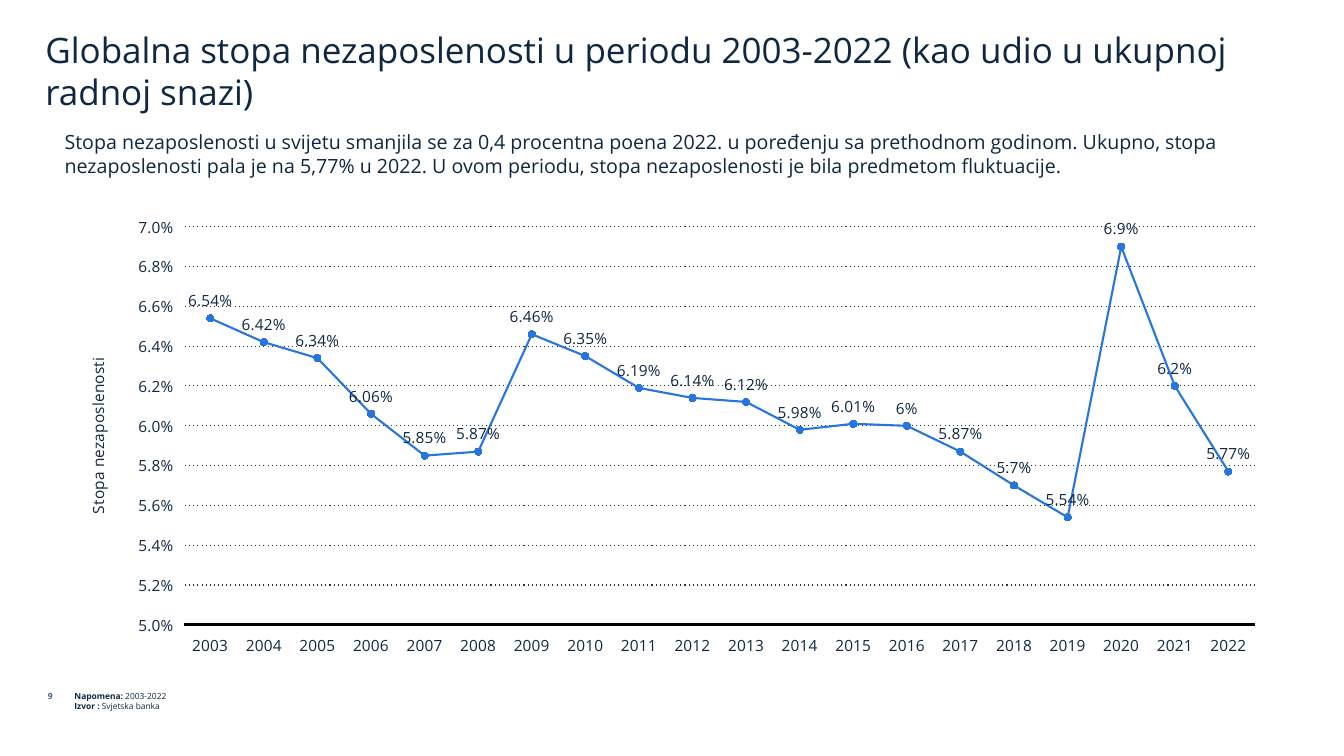
import pptx
import pptx.util
import pptx.chart.data
import pptx.dml.color
import pptx.enum.chart
import pptx.enum.dml
import pptx.enum.text
import pptx.oxml
import pptx.oxml.ns
from lxml import etree

HEADLINE = "Globalna stopa nezaposlenosti u periodu 2003-2022 (kao udio u ukupnoj radnoj snazi)"
SUMMARY = (
    "Stopa nezaposlenosti u svijetu smanjila se za 0,4 procentna poena 2022. u poređenju sa "
    "prethodnom godinom. Ukupno, stopa nezaposlenosti pala je na 5,77% u 2022. U ovom periodu, "
    "stopa nezaposlenosti je bila predmetom fluktuacije."
)
FOOTNOTES = [("Napomena: ", "2003-2022"), ("Izvor : ", "Svjetska banka")]
PAGE_NUMBER = "9"
RATE_TITLE = "Stopa nezaposlenosti"
FIRST_YEAR = 2003
RATES = [0.0654, 0.0642, 0.0634, 0.0606, 0.0585, 0.0587, 0.0646, 0.0635, 0.0619, 0.0614,
         0.0612, 0.0598, 0.0601, 0.06, 0.0587, 0.057, 0.0554, 0.069, 0.062, 0.0577]
LABEL_FORMATS = {2: "0%", 3: "0.0%", 4: "0.00%"}

THEME = {
    "font": "Open Sans", "ink": "0F2741", "muted": "455F7C", "line": "2875DD",
    "grid": "2F2F2F", "axis": "000000", "spacing": 1.0,
    "headline": 25, "summary": 14, "chart": 11, "note": 6,
}
WIDTH, HEIGHT = 13.33, 7.5
FOOT_TOP = 6.81
CHART_WIDTH, CHART_HEIGHT = 12.05, 4.54
PLACES = {
    "headline": (0.35, 0.12, 12.44, 1.05),
    "summary": (0.54, 1.24, 12.24, 0.48),
    "chart": (0.64, 2.06, CHART_WIDTH, CHART_HEIGHT),
    "footnotes": (0.64, FOOT_TOP, 10.47, 0.58),
    "number": (-0.1, FOOT_TOP, 0.72, 0.3),
}
PLOT_PLACE = {"x": 1.18, "y": 0.19, "w": 10.63, "h": 3.95}
RATE_TITLE_PLACE = {"x": 0.18, "y": 1.46}


def inches(place):
    return [pptx.util.Inches(length) for length in place]


def rgb(role):
    return pptx.dml.color.RGBColor.from_string(THEME[role])


def style(font, size, color="ink", bold=False):
    font.name = THEME["font"]
    font.size = pptx.util.Pt(THEME[size])
    font.bold = bold
    font.color.rgb = rgb(color)


def stroke(line, color, width):
    line.color.rgb = rgb(color)
    line.width = pptx.util.Pt(width)


def write(box, part, paragraphs, size, color="ink", align="LEFT", anchor="TOP"):
    box.left, box.top, box.width, box.height = inches(PLACES[part])
    frame = box.text_frame
    frame.word_wrap = True
    frame.auto_size = pptx.enum.text.MSO_AUTO_SIZE.NONE
    frame.vertical_anchor = getattr(pptx.enum.text.MSO_ANCHOR, anchor)
    for index, runs in enumerate(paragraphs):
        paragraph = frame.add_paragraph() if index else frame.paragraphs[0]
        paragraph.alignment = getattr(pptx.enum.text.PP_ALIGN, align)
        paragraph.line_spacing = THEME["spacing"]
        paragraph.space_before = pptx.util.Pt(0)
        for text, bold in runs:
            run = paragraph.add_run()
            run.text = text
            style(run.font, size, color, bold)
    return frame


def chart_layout(place, inner=False):
    tag = pptx.oxml.ns.qn
    layout = etree.Element(tag("c:layout"))
    manual = etree.SubElement(layout, tag("c:manualLayout"))
    settings = [("layoutTarget", "inner")] if inner else []
    settings += [("xMode", "edge"), ("yMode", "edge")]
    for name, length in place.items():
        settings.append((name, length / (CHART_WIDTH if name in "xw" else CHART_HEIGHT)))
    for name, value in settings:
        etree.SubElement(manual, tag("c:" + name)).set("val", str(value))
    return layout


def drop_layout(parent):
    for layout in parent.findall(pptx.oxml.ns.qn("c:layout")):
        parent.remove(layout)


deck = pptx.Presentation()
deck.slide_width, deck.slide_height = inches((WIDTH, HEIGHT))
slide = deck.slides.add_slide(deck.slide_layouts[1])

write(slide.shapes.title, "headline", [[(HEADLINE, False)]], "headline", anchor="BOTTOM")
summary = write(slide.placeholders[1], "summary", [[(SUMMARY, False)]], "summary")
bullet_free = summary.paragraphs[0]._p.get_or_add_pPr()
bullet_free.set("marL", "0")
bullet_free.set("indent", "0")
etree.SubElement(bullet_free, pptx.oxml.ns.qn("a:buNone"))

unemployment = pptx.chart.data.CategoryChartData(number_format="0.00%")
unemployment.categories = [str(FIRST_YEAR + step) for step in range(len(RATES))]
unemployment.add_series("Series 1", RATES)
chart = slide.shapes.add_chart(
    pptx.enum.chart.XL_CHART_TYPE.LINE_MARKERS, *inches(PLACES["chart"]), unemployment
).chart
chart.has_legend = False
chart.has_title = False
style(chart.font, "chart")

years, rates = chart.category_axis, chart.value_axis
for axis in (years, rates):
    axis.major_tick_mark = axis.minor_tick_mark = pptx.enum.chart.XL_TICK_MARK.NONE
    axis.tick_label_position = pptx.enum.chart.XL_TICK_LABEL_POSITION.LOW
    style(axis.tick_labels.font, "chart")
stroke(years.format.line, "axis", 2)
rates.format.line.fill.background()
rates.minimum_scale, rates.maximum_scale, rates.major_unit = 0.05, 0.07, 0.002
rates.tick_labels.number_format = "#,##0.0%"
rates.tick_labels.number_format_is_linked = False
rates.has_major_gridlines = True
gridline = rates.major_gridlines.format.line
stroke(gridline, "grid", 0.75)
gridline.dash_style = pptx.enum.dml.MSO_LINE.ROUND_DOT
for dash in rates._element.iter(pptx.oxml.ns.qn("a:prstDash")):
    dash.set("val", "dot")

rates.has_title = True
rate_run = rates.axis_title.text_frame.paragraphs[0].add_run()
rate_run.text = RATE_TITLE
style(rate_run.font, "chart")
rate_title = rates.axis_title._element
drop_layout(rate_title)
rate_title.find(pptx.oxml.ns.qn("c:tx")).addnext(chart_layout(RATE_TITLE_PLACE))
plot_area = chart._chartSpace.chart.plotArea
drop_layout(plot_area)
plot_area.insert(0, chart_layout(PLOT_PLACE, inner=True))

plot = chart.plots[0]
plot.vary_by_categories = False
trend = plot.series[0]
trend.smooth = False
stroke(trend.format.line, "line", 1.5)
trend.marker.style = pptx.enum.chart.XL_MARKER_STYLE.CIRCLE
trend.marker.size = 5
trend.marker.format.fill.solid()
trend.marker.format.fill.fore_color.rgb = rgb("line")
stroke(trend.marker.format.line, "line", 0.75)

above = pptx.enum.chart.XL_LABEL_POSITION.ABOVE
labels = trend.data_labels
labels.show_value = True
labels.position = above
labels.number_format = LABEL_FORMATS[4]
labels.number_format_is_linked = False
style(labels.font, "chart")
for index, rate in enumerate(RATES):
    label = trend.points[index].data_label
    label.position = above
    style(label.font, "chart")
for label, rate in zip(labels._element.findall(pptx.oxml.ns.qn("c:dLbl")), RATES):
    decimals = len(str(rate).split(".")[1])
    label_format = etree.Element(pptx.oxml.ns.qn("c:numFmt"))
    label_format.set("formatCode", LABEL_FORMATS[decimals])
    label_format.set("sourceLinked", "0")
    label.find(pptx.oxml.ns.qn("c:idx")).addnext(label_format)

footnotes = [[(label, True), (text, False)] for label, text in FOOTNOTES]
write(slide.shapes.add_textbox(0, 0, 0, 0), "footnotes", footnotes, "note")
write(slide.shapes.add_textbox(0, 0, 0, 0), "number", [[(PAGE_NUMBER, True)]],
      "note", color="muted", align="RIGHT")

deck.save("out.pptx")
